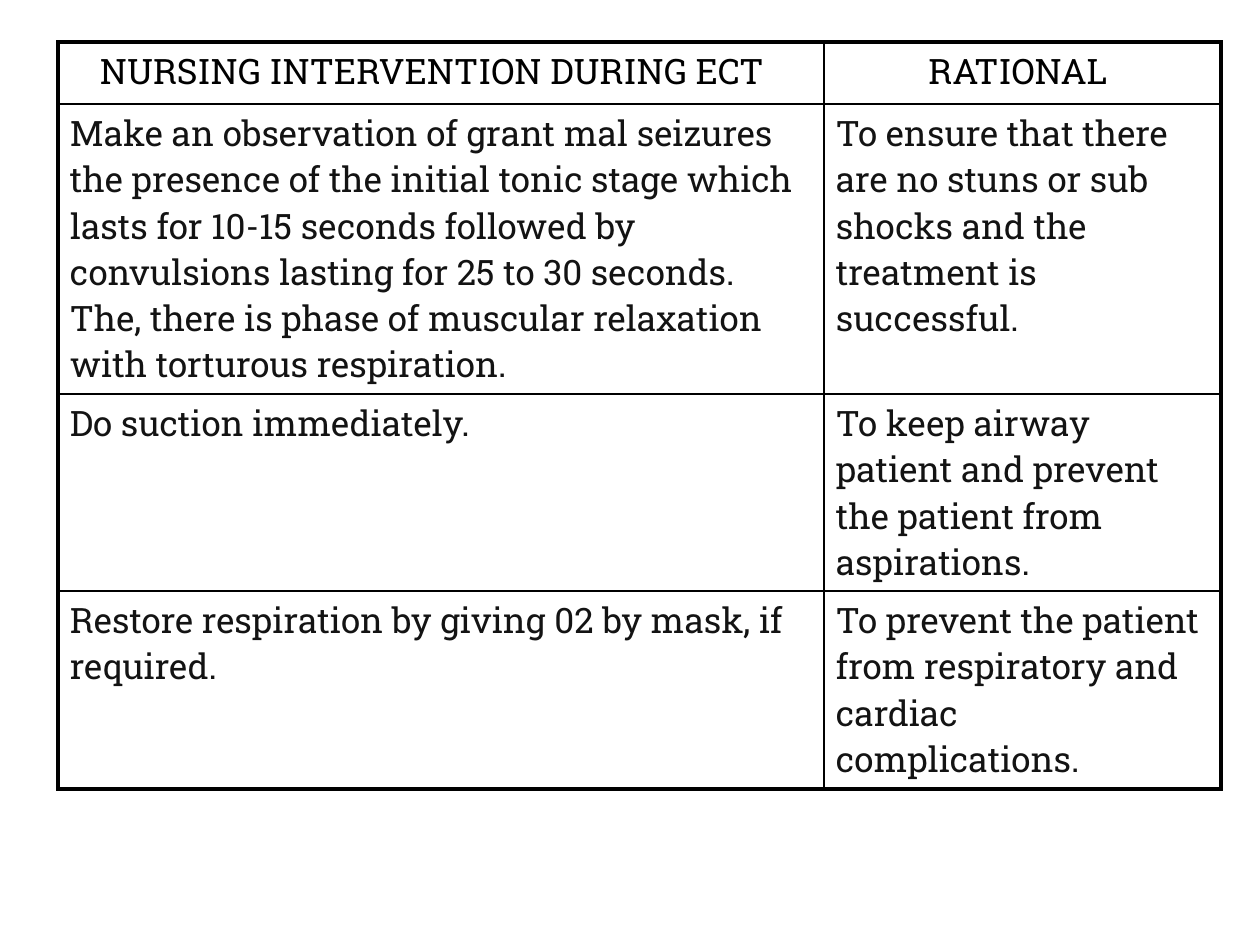
"""Build a slide with a table of nursing interventions during ECT."""
from dataclasses import dataclass

import pptx
import pptx.dml.color
import pptx.enum.text
import pptx.oxml
import pptx.oxml.ns
import pptx.table
import pptx.util

SCALE = 914400 / 126
COLORS = {"line": "000000", "head": "000000", "body": "131313"}
FONT = "Roboto Slab"
SIZE = 20
THIN, THICK = 1, 2.25
LEFT, TOP = 58, 42
COLS = (766, 397)
PAD_X, PAD_Y = 12, 6


@dataclass(frozen=True)
class Row:
    height: int
    texts: tuple[str, str]
    head: bool = False
    extra: tuple[int, int] = (0, 0)


ROWS = (
    Row(62, ("NURSING INTERVENTION DURING ECT", "RATIONAL"), True, (18, 9)),
    Row(290, (
        "Make an observation of grant mal seizures the presence of the initial "
        "tonic stage which lasts for 10-15 seconds followed by convulsions "
        "lasting for 25 to 30 seconds. The, there is phase of muscular "
        "relaxation with torturous respiration.",
        "To ensure that there are no stuns or sub shocks and the treatment is "
        "successful.",
    )),
    Row(197, (
        "Do suction immediately.",
        "To keep airway patient and prevent the patient from aspirations.",
    )),
    Row(198, (
        "Restore respiration by giving 02 by mask, if required.",
        "To prevent the patient from respiratory and cardiac complications.",
    )),
)


def px(count: int) -> pptx.util.Emu:
    """Turn pixels into EMU."""
    return pptx.util.Emu(round(count * SCALE))


def edge(cell: pptx.table._Cell, side: str, width: float) -> None:
    """Draw one border of a cell."""
    line = pptx.oxml.parse_xml(
        f'<a:ln{side} {pptx.oxml.ns.nsdecls("a")} w="{pptx.util.Pt(width)}">'
        f'<a:solidFill><a:srgbClr val="{COLORS["line"]}"/></a:solidFill>'
        f'<a:prstDash val="solid"/></a:ln{side}>'
    )
    cell._tc.get_or_add_tcPr().append(line)


def write(cell: pptx.table._Cell, text: str, head: bool, extra: int) -> None:
    """Fill a cell with styled text."""
    cell.margin_left = px(PAD_X)
    cell.margin_right = px(PAD_X + extra)
    cell.margin_top = cell.margin_bottom = px(PAD_Y)
    cell.text = text
    para = cell.text_frame.paragraphs[0]
    align = pptx.enum.text.PP_ALIGN
    para.alignment = align.CENTER if head else align.LEFT
    para.font.name = FONT
    para.font.size = pptx.util.Pt(SIZE)
    para.font.bold = False
    tone = COLORS["head" if head else "body"]
    para.font.color.rgb = pptx.dml.color.RGBColor.from_string(tone)


def main() -> None:
    """Build and save the slide."""
    deck = pptx.Presentation()
    deck.slide_width, deck.slide_height = px(1260), px(945)
    slide = deck.slides.add_slide(deck.slide_layouts[6])
    high = sum(row.height for row in ROWS)
    frame = slide.shapes.add_table(
        len(ROWS), len(COLS), px(LEFT), px(TOP), px(sum(COLS)), px(high)
    )
    table = frame.table
    table.first_row = table.horz_banding = False
    for col, width in zip(table.columns, COLS):
        col.width = px(width)
    for i, row in enumerate(ROWS):
        table.rows[i].height = px(row.height)
        for j, text in enumerate(row.texts):
            cell = table.cell(i, j)
            write(cell, text, row.head, row.extra[j])
            outer = {
                "L": j == 0,
                "R": j == len(COLS) - 1,
                "T": i == 0,
                "B": i == len(ROWS) - 1,
            }
            for side, rim in outer.items():
                edge(cell, side, THICK if rim else THIN)
            cell.fill.background()
    deck.save("out.pptx")


if __name__ == "__main__":
    main()
